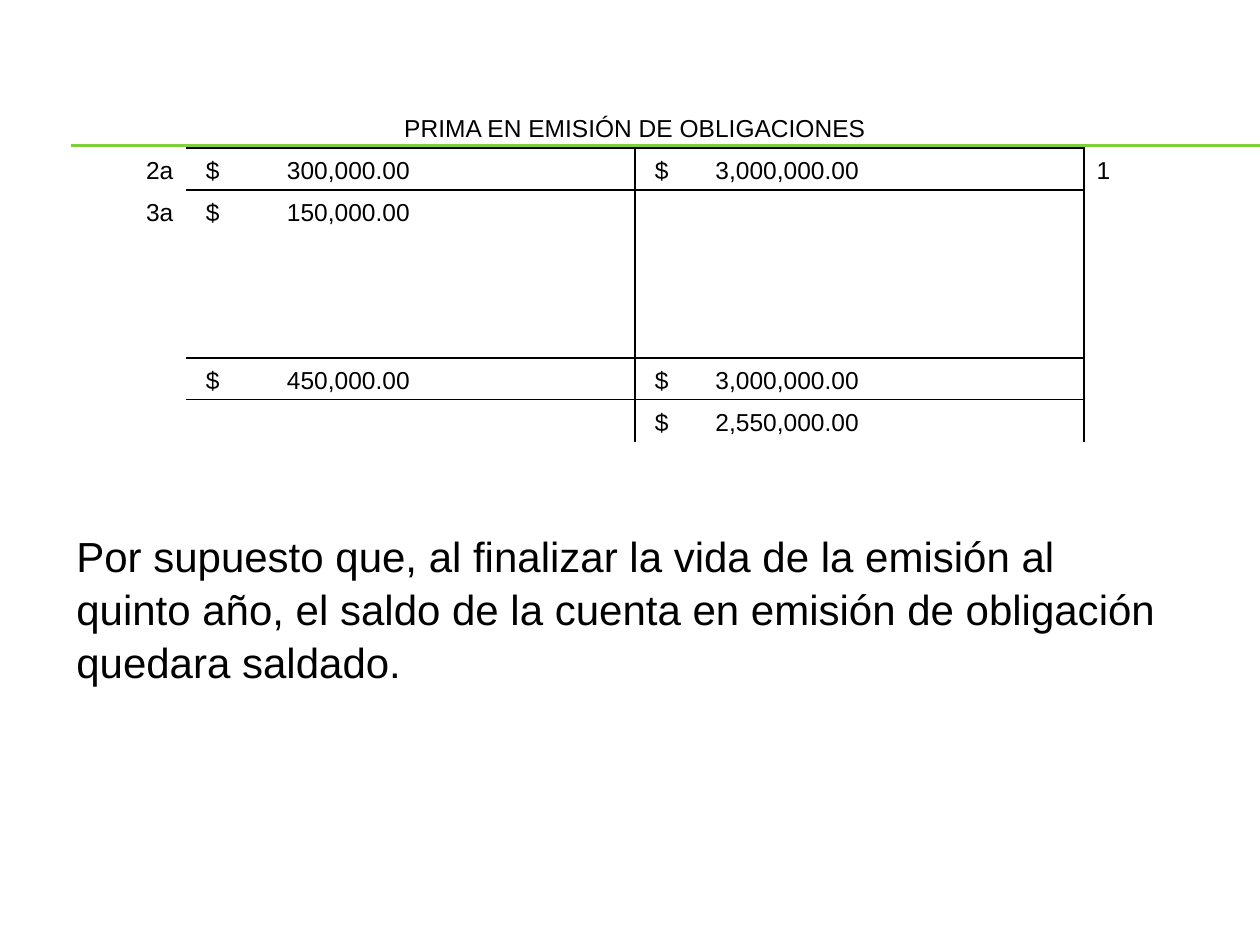
import pptx
import pptx.util
import pptx.dml.color
import pptx.enum.shapes
import pptx.enum.text
import pptx.oxml
import pptx.oxml.ns

# Content: rows of the T-account (reference, debit, credit, reference)
TITLE = "PRIMA EN EMISIÓN DE OBLIGACIONES"
ROWS = [
    ("", "", "", ""),
    ("", TITLE, "", ""),
    ("2a", "$\t300,000.00", "$\t3,000,000.00", "1"),
    ("3a", "$\t150,000.00", "", ""),
    ("", "", "", ""),
    ("", "", "", ""),
    ("", "", "", ""),
    ("", "$\t450,000.00", "$\t3,000,000.00", ""),
    ("", "", "$\t2,550,000.00", ""),
]
NOTE = ("Por supuesto que, al finalizar la vida de la emisión al quinto año, "
        "el saldo de la cuenta en emisión de obligación quedara saldado.")

# Layout in px
TABLE_LEFT, TABLE_TOP, ROW_HEIGHT = 44, 64, 42
COLUMN_WIDTHS = [142, 449, 449, 137]
TITLE_ROW = 1
RULED_ROWS = (2, 7, 8)          # rows with a rule above them
AMOUNT_MARGIN, AMOUNT_TAB = 20, 204
NO_STYLE = "{2D5ABB26-0587-4C30-8999-92F81FD0307C}"
BLACK, GREEN = "000000", "7FD13B"
ALIGN = pptx.enum.text.PP_ALIGN
COLUMN_ALIGN = [ALIGN.RIGHT, ALIGN.LEFT, ALIGN.LEFT, ALIGN.LEFT]


def px(value):
    return pptx.util.Emu(round(value * 914400 / 126))


def color(value):
    return pptx.dml.color.RGBColor.from_string(value)


def format_text(para, size):
    for span in para.runs:
        span.font.name = "Arial"
        span.font.size = pptx.util.Pt(size)
        span.font.color.rgb = color(BLACK)


def xml(markup):
    return pptx.oxml.parse_xml(markup.replace(" ", " " + pptx.oxml.ns.nsdecls("a") + " ", 1))


def set_borders(cell, sides):
    properties = cell._tc.get_or_add_tcPr()
    for index, side in enumerate(side for side in "LRTB" if side in sides):
        properties.insert(index, xml(
            f'<a:ln{side} w="12700"><a:solidFill><a:srgbClr val="{BLACK}"/>'
            f'</a:solidFill></a:ln{side}>'))


def borders_of(row, column):
    if column not in (1, 2):
        return ""
    sides = ""
    if row > TITLE_ROW:
        sides += "R" if column == 1 else "L"
    if row in RULED_ROWS:
        sides += "T"
    if row + 1 in RULED_ROWS:
        sides += "B"
    return sides


def fill_cell(cell, text, row, column):
    cell.fill.background()
    cell.vertical_anchor = pptx.enum.text.MSO_ANCHOR.BOTTOM
    cell.margin_top = 0
    cell.margin_bottom = px(5 if text else 0)
    para = cell.text_frame.paragraphs[0]
    if text:
        para.text = text
        para.alignment = ALIGN.CENTER if row == TITLE_ROW else COLUMN_ALIGN[column]
        format_text(para, 14)
    if "\t" in text:
        cell.margin_left = px(AMOUNT_MARGIN)
        para._p.get_or_add_pPr().append(xml(
            f'<a:tabLst ><a:tab pos="{px(AMOUNT_TAB)}" algn="r"/></a:tabLst>'))
    set_borders(cell, borders_of(row, column))


deck = pptx.Presentation()
deck.slide_width, deck.slide_height = px(1260), px(945)
page = deck.slides.add_slide(deck.slide_layouts[6])

# Green double rule
for y in (145, 146):
    rule = page.shapes.add_connector(
        pptx.enum.shapes.MSO_CONNECTOR.STRAIGHT, px(71), px(y), px(1260), px(y))
    rule.line.color.rgb = color(GREEN)
    rule.line.width = pptx.util.Pt(0.75)
    rule._element.spPr.append(xml("<a:effectLst />"))

# T-account
frame = page.shapes.add_table(
    len(ROWS), len(COLUMN_WIDTHS), px(TABLE_LEFT), px(TABLE_TOP),
    px(sum(COLUMN_WIDTHS)), px(ROW_HEIGHT * len(ROWS)))
account = frame.table
account.first_row = account.horz_banding = False
account._tbl.tblPr.find(pptx.oxml.ns.qn("a:tableStyleId")).text = NO_STYLE
for column, width in zip(account.columns, COLUMN_WIDTHS):
    column.width = px(width)
for row_index, texts in enumerate(ROWS):
    account.rows[row_index].height = px(ROW_HEIGHT)
    for column_index, text in enumerate(texts):
        fill_cell(account.cell(row_index, column_index), text, row_index, column_index)
account.cell(TITLE_ROW, 1).merge(account.cell(TITLE_ROW, 2))

# Closing note
box = page.shapes.add_textbox(px(64), px(522), px(1111), px(164))
box.text_frame.word_wrap = True
note = box.text_frame.paragraphs[0]
note.text = NOTE
note.line_spacing = 1.05
format_text(note, 24)

deck.save("out.pptx")
